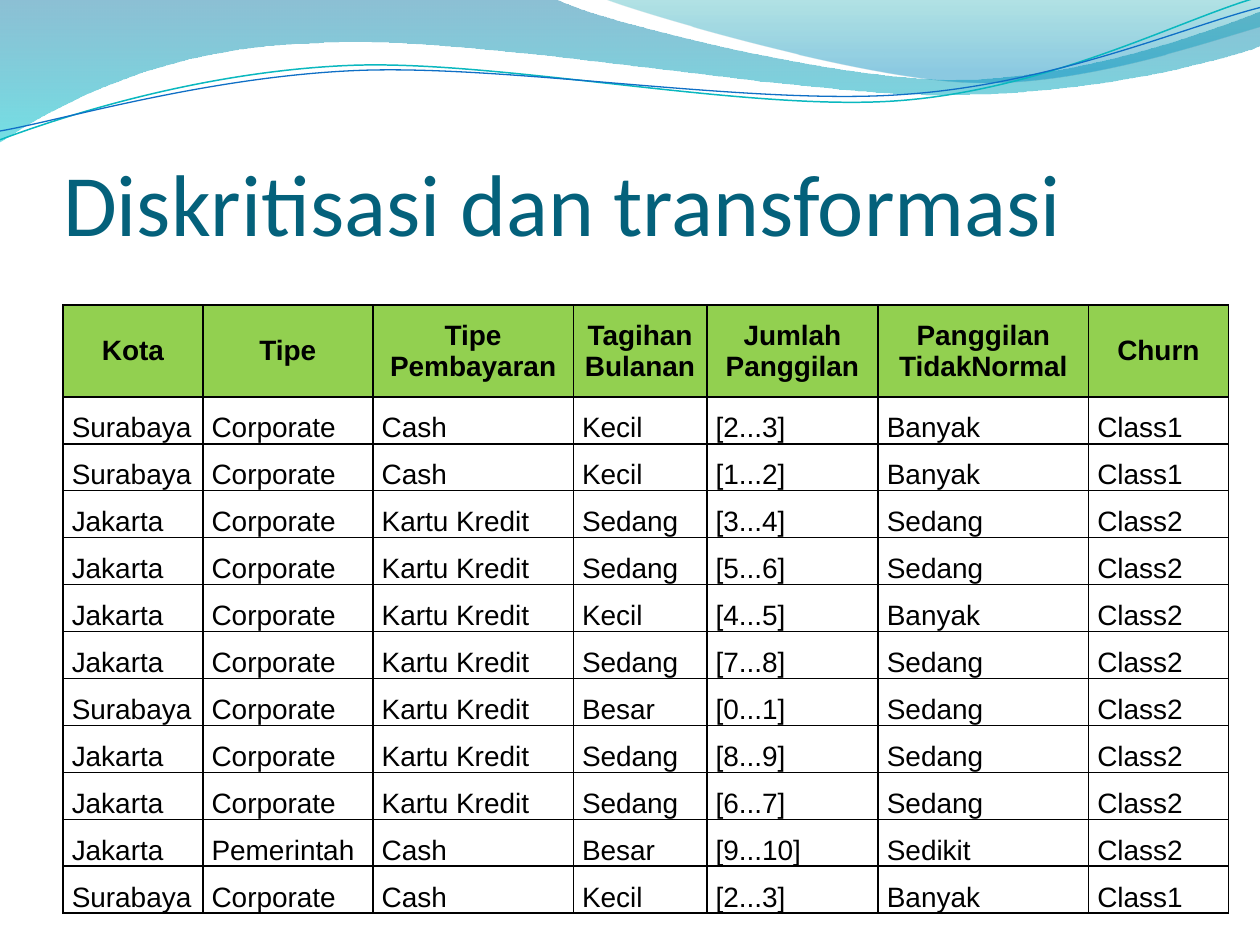
from pptx import Presentation
from pptx import util as u
from pptx.dml.color import RGBColor
from pptx.enum import text
from pptx.oxml.ns import qn
from lxml import etree

# Content
TITLE = "Diskritisasi dan transformasi"
HEAD = ["Kota", "Tipe", "Tipe\nPembayaran", "Tagihan\nBulanan",
        "Jumlah\nPanggilan", "Panggilan\nTidakNormal", "Churn"]
ROWS = [
    ("Surabaya", "Corporate", "Cash", "Kecil", "[2...3]", "Banyak", "Class1"),
    ("Surabaya", "Corporate", "Cash", "Kecil", "[1...2]", "Banyak", "Class1"),
    ("Jakarta", "Corporate", "Kartu Kredit", "Sedang", "[3...4]", "Sedang", "Class2"),
    ("Jakarta", "Corporate", "Kartu Kredit", "Sedang", "[5...6]", "Sedang", "Class2"),
    ("Jakarta", "Corporate", "Kartu Kredit", "Kecil", "[4...5]", "Banyak", "Class2"),
    ("Jakarta", "Corporate", "Kartu Kredit", "Sedang", "[7...8]", "Sedang", "Class2"),
    ("Surabaya", "Corporate", "Kartu Kredit", "Besar", "[0...1]", "Sedang", "Class2"),
    ("Jakarta", "Corporate", "Kartu Kredit", "Sedang", "[8...9]", "Sedang", "Class2"),
    ("Jakarta", "Corporate", "Kartu Kredit", "Sedang", "[6...7]", "Sedang", "Class2"),
    ("Jakarta", "Pemerintah", "Cash", "Besar", "[9...10]", "Sedikit", "Class2"),
    ("Surabaya", "Corporate", "Cash", "Kecil", "[2...3]", "Banyak", "Class1"),
]
COLS = [1.11, 1.35, 1.59, 1.06, 1.36, 1.67, 1.11]
LEFT, TOP, TALL, HEAD_H = 0.5, 2.42, 4.83, 0.73

THEME = dict(title="04617B", ink="000000", head="92D050", teal="0AB8BF", blue="0F6FC6",
             title_font="Calibri", font="Arial", title_size=50, size=16, rule=1)

# Waves: a point pair is a straight step, six numbers are a Bezier curve
# Gradient stops: position, colour, opacity in percent
BANDS = [
    ([(0, 0), (4.4, -0.01), (4.76, 0.17, 6.64, 0.63, 7.58, 0.63),
      (8.53, 0.63, 9.58, 0.26, 10, 0.09), (10.01, 0.36),
      (9.83, 0.44, 8.7, 0.76, 7.46, 0.75), (6.22, 0.75, 3.82, 0.28, 2.57, 0.34),
      (1.29, 0.36, 0.46, 0.83, -0.01, 1.13), (0, 0)],
     [(0, "0074A1", 45), (1, "00C6CF", 55)]),
    ([(4.79, -0.01), (5.09, 0.11, 6.82, 0.62, 7.69, 0.65),
      (8.56, 0.69, 9.61, 0.32, 10, 0.21), (10, 0), (4.79, -0.01)],
     [(0, "00A1A9", 30), (0.8, "008BBF", 45)]),
]
LINES = [
    ([(0, 1.11), (0.48, 0.93, 1.58, 0.57, 2.77, 0.52),
      (3.95, 0.47, 5.93, 0.89, 7.13, 0.8), (8.33, 0.71, 9.38, 0.15, 9.98, -0.02)],
     THEME["teal"], 0.85),
    ([(0, 1.04), (0.47, 0.96, 1.64, 0.61, 2.83, 0.56),
      (4.03, 0.51, 5.97, 0.84, 7.17, 0.75), (8.36, 0.67, 9.41, 0.21, 10, 0.06)],
     THEME["blue"], 0.75),
]


def rgb(code):
    return RGBColor.from_string(code)


def draw(slide, steps, close):
    """Build the outline, then join each curve's three points into one Bezier."""
    pts = [(u.Inches(s[i]), u.Inches(s[i + 1])) for s in steps for i in range(0, len(s), 2)]
    pen = slide.shapes.build_freeform(*pts[0])
    pen.add_line_segments(pts[1:], close=close)
    shape = pen.convert_to_shape()
    shape.shadow.inherit = False
    parts = iter(list(shape._element.iter(qn("a:lnTo"))))
    for step in steps[1:]:
        first = next(parts)
        if len(step) == 6:
            curve = etree.Element(qn("a:cubicBezTo"))
            first.addprevious(curve)
            for part in (first, next(parts), next(parts)):
                curve.append(part[0])
                part.getparent().remove(part)
    return shape


def add_waves(slide):
    for steps, stops in BANDS:
        band = draw(slide, steps, True)
        band.line.fill.background()
        band.fill.gradient()
        band.fill.gradient_angle = 270
        for stop, (pos, color, alpha) in zip(band.fill.gradient_stops, stops):
            stop.position = pos
            stop.color.rgb = rgb(color)
        tags = band._element.spPr.iter(qn("a:srgbClr"))
        for tag, (pos, color, alpha) in zip(tags, stops):
            etree.SubElement(tag, qn("a:alpha"), val=str(alpha * 1000))
    for steps, color, width in LINES:
        wave = draw(slide, steps, False)
        wave.fill.background()
        wave.line.color.rgb = rgb(color)
        wave.line.width = u.Pt(width)


def style(frame, font, size, color, bold, align):
    for para in frame.paragraphs:
        para.alignment = align
        for run in para.runs:
            run.font.name, run.font.size = font, u.Pt(size)
            run.font.bold, run.font.color.rgb = bold, rgb(color)


def add_title(slide):
    title = slide.shapes.title
    title.left, title.top = u.Inches(0.5), u.Inches(0.77)
    title.width, title.height = u.Inches(9.08), u.Inches(1.25)
    frame = title.text_frame
    frame.text = TITLE
    frame.word_wrap = True
    frame.auto_size = text.MSO_AUTO_SIZE.NONE
    frame.vertical_anchor = text.MSO_ANCHOR.BOTTOM
    frame.margin_left = frame.margin_right = frame.margin_bottom = 0
    frame.margin_top = u.Inches(0.05)
    style(frame, THEME["title_font"], THEME["title_size"], THEME["title"],
          False, text.PP_ALIGN.LEFT)


def add_borders(cell):
    props = cell._tc.get_or_add_tcPr()
    for side in ("lnL", "lnR", "lnT", "lnB"):
        line = etree.SubElement(props, qn("a:" + side), w=str(u.Pt(THEME["rule"])))
        fill = etree.SubElement(line, qn("a:solidFill"))
        etree.SubElement(fill, qn("a:srgbClr"), val=THEME["ink"])


def add_grid(slide):
    data = [HEAD] + ROWS
    grid = slide.shapes.add_table(len(data), len(COLS), u.Inches(LEFT), u.Inches(TOP),
                                  u.Inches(sum(COLS)), u.Inches(TALL)).table
    grid.first_row = grid.horz_banding = False
    for col, width in zip(grid.columns, COLS):
        col.width = u.Inches(width)
    for r, words in enumerate(data):
        top = r == 0
        grid.rows[r].height = u.Inches(HEAD_H if top else (TALL - HEAD_H) / len(ROWS))
        for c, word in enumerate(words):
            cell = grid.cell(r, c)
            cell.text_frame.text = word
            cell.margin_left = cell.margin_right = u.Inches(0.07)
            cell.margin_top = cell.margin_bottom = 0
            cell.vertical_anchor = text.MSO_ANCHOR.MIDDLE if top else text.MSO_ANCHOR.BOTTOM
            style(cell.text_frame, THEME["font"], THEME["size"], THEME["ink"], top,
                  text.PP_ALIGN.CENTER if top else text.PP_ALIGN.LEFT)
            add_borders(cell)
            if top:
                cell.fill.solid()
                cell.fill.fore_color.rgb = rgb(THEME["head"])
            else:
                cell.fill.background()


def main():
    deck = Presentation()
    deck.slide_width, deck.slide_height = u.Inches(10), u.Inches(7.5)
    slide = deck.slides.add_slide(deck.slide_layouts[5])
    add_waves(slide)
    # Bring the title in front of the waves
    slide.shapes._spTree.append(slide.shapes.title._element)
    add_title(slide)
    add_grid(slide)
    deck.save("out.pptx")


if __name__ == "__main__":
    main()
